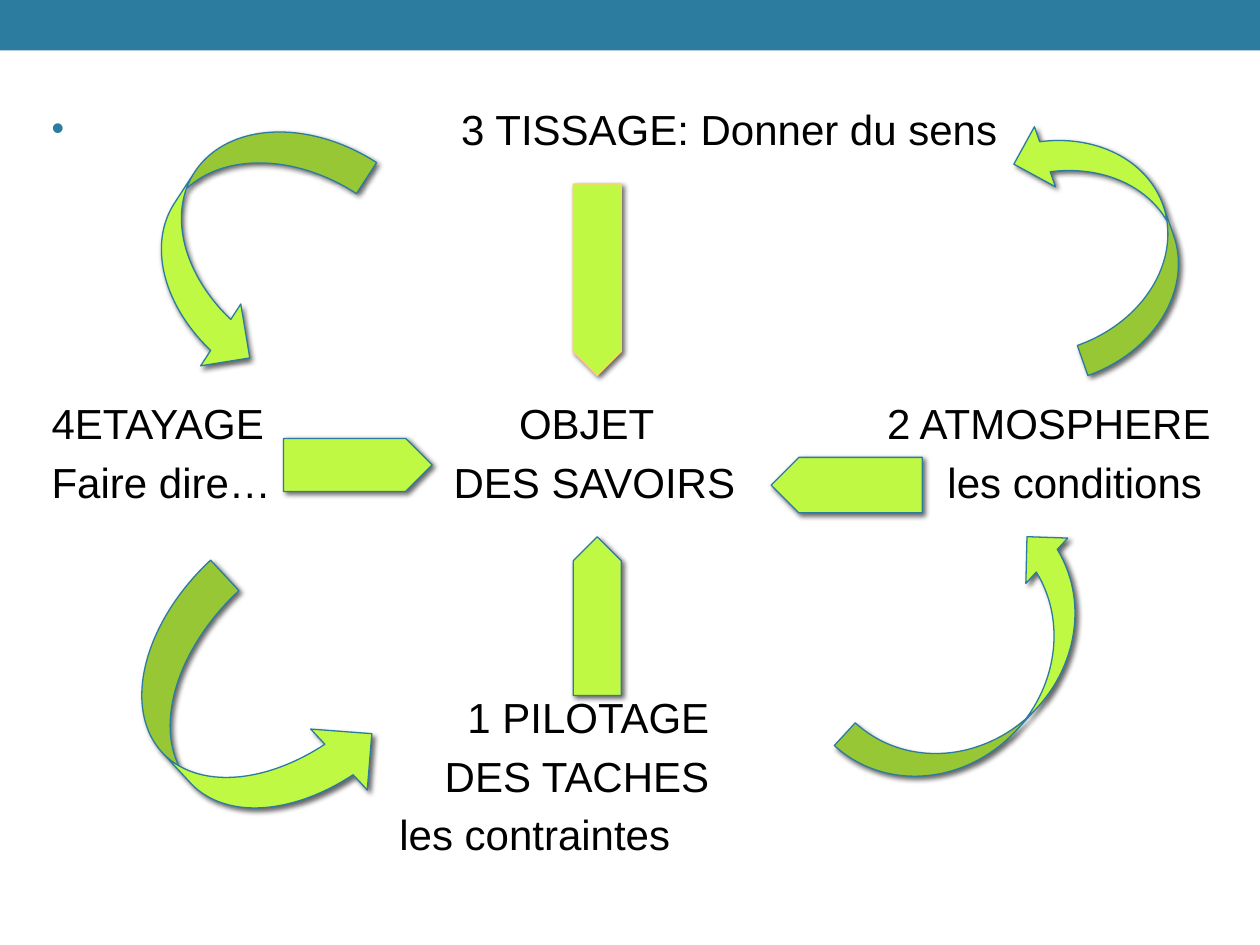
from lxml import etree
from pptx import Presentation
from pptx import util as u
from pptx.dml.color import RGBColor
from pptx.enum import shapes, text
from pptx.oxml.ns import qn

In = u.Inches
KIND = shapes.MSO_SHAPE
COLORS = {"teal": "2C7C9F", "lime": "BFF944", "gold": "FFD266", "black": "000000"}
SIZE = 24
LINE_PITCH = u.Pt(SIZE * 1.4)

# row, left, width, wording; rows share one line grid
LABELS = [
    (5, 0.41, 1.8, "4ETAYAGE"),
    (6, 0.41, 1.8, "Faire dire…"),
    (5, 4.12, 1.2, "OBJET"),
    (6, 3.6, 2.3, "DES SAVOIRS"),
    (5, 7.04, 2.65, "2 ATMOSPHERE"),
    (6, 7.52, 2.1, "les conditions"),
    (10, 3.71, 2.0, "1 PILOTAGE"),
    (11, 3.53, 2.2, "DES TACHES"),
    (12, 3.17, 2.3, "les contraintes"),
]

# kind, left, top, width, height, rotation
CYCLE_ARROWS = [
    (KIND.CURVED_RIGHT_ARROW, 1.33, 0.8, 1.17, 2.14, 33),
    (KIND.CURVED_RIGHT_ARROW, 1.28, 4.6, 1.32, 2.21, 317.1),
    (KIND.CURVED_UP_ARROW, 6.58, 4.84, 2.5, 0.98, 312.7),
    (KIND.CURVED_UP_ARROW, 7.76, 1.35, 2.03, 1.01, 250.7),
]

# left, top, width, height, rotation, outline
CENTRE_ARROWS = [
    (6.12, 3.63, 1.2, 0.44, 180, "teal"),
    (4.11, 4.7, 1.26, 0.38, 270, "teal"),
    (2.25, 3.48, 1.18, 0.42, 0, "teal"),
    (3.98, 2.03, 1.52, 0.38, 90, "gold"),
]


def rgb(name):
    return RGBColor.from_string(COLORS[name])


def add_text(s, wording, x, y, w, h, size=SIZE, color="black", font="Arial"):
    tf = s.shapes.add_textbox(x, y, w, h).text_frame
    tf.word_wrap = False
    tf.vertical_anchor = text.MSO_ANCHOR.TOP
    tf.margin_left = tf.margin_right = tf.margin_top = tf.margin_bottom = 0
    p = tf.paragraphs[0]
    r = p.add_run()
    r.text = wording
    r.font.size = u.Pt(size)
    r.font.name = font
    r.font.color.rgb = rgb(color)
    return p


def add_bullet(p, indent):
    pPr = p._p.get_or_add_pPr()
    pPr.set("marL", str(indent))
    pPr.set("indent", str(-indent))
    clr = etree.SubElement(pPr, qn("a:buClr"))
    etree.SubElement(clr, qn("a:srgbClr"), val=COLORS["teal"])
    etree.SubElement(pPr, qn("a:buSzPct"), val="85000")
    etree.SubElement(pPr, qn("a:buFont"), typeface="Arial")
    etree.SubElement(pPr, qn("a:buChar"), char="•")


def add_shadow(sp):
    effects = sp._element.spPr.find(qn("a:effectLst"))
    shadow = etree.SubElement(effects, qn("a:outerShdw"), blurRad=str(u.Pt(3)),
                              dist=str(u.Pt(2)), dir=str(45 * 60000), rotWithShape="0")
    clr = etree.SubElement(shadow, qn("a:srgbClr"), val=COLORS["black"])
    etree.SubElement(clr, qn("a:alpha"), val="60000")


def add_arrow(s, kind, x, y, w, h, rotation, outline="teal"):
    sp = s.shapes.add_shape(kind, x, y, w, h)
    sp.rotation = rotation
    sp.fill.solid()
    sp.fill.fore_color.rgb = rgb("lime")
    sp.line.color.rgb = rgb(outline)
    sp.line.width = u.Pt(0.75)
    sp.shadow.inherit = False
    add_shadow(sp)


def add_band(s, x, y, w, h):
    sp = s.shapes.add_shape(KIND.RECTANGLE, x, y, w, h)
    sp.fill.solid()
    sp.fill.fore_color.rgb = rgb("teal")
    sp.line.fill.background()
    sp.shadow.inherit = False


def add_labels(s, x, y, w):
    """Place the bulleted heading and the labels on the line grid."""
    line_height = In(0.38)
    heading = add_text(s, "3 TISSAGE: Donner du sens", x + In(0.41), y, w - In(0.82), line_height)
    add_bullet(heading, In(3.25))
    for row, left, width, wording in LABELS:
        add_text(s, wording, x + In(left), y + row * LINE_PITCH, In(width), line_height)


def add_arrows(s, x, y):
    """Place the outer cycle and the arrows that point to the centre."""
    for kind, left, top, width, height, rotation in CYCLE_ARROWS:
        add_arrow(s, kind, x + In(left), y + In(top), In(width), In(height), rotation)
    for left, top, width, height, rotation, outline in CENTRE_ARROWS:
        add_arrow(s, KIND.PENTAGON, x + In(left), y + In(top), In(width), In(height),
                  rotation, outline)


def main():
    prs = Presentation()
    prs.slide_width, prs.slide_height = In(10), In(7.5)
    s = prs.slides.add_slide(prs.slide_layouts[6])
    add_band(s, 0, 0, prs.slide_width, In(0.4))
    add_labels(s, 0, In(0.82), prs.slide_width)
    add_arrows(s, 0, 0)
    prs.save("out.pptx")


if __name__ == "__main__":
    main()
